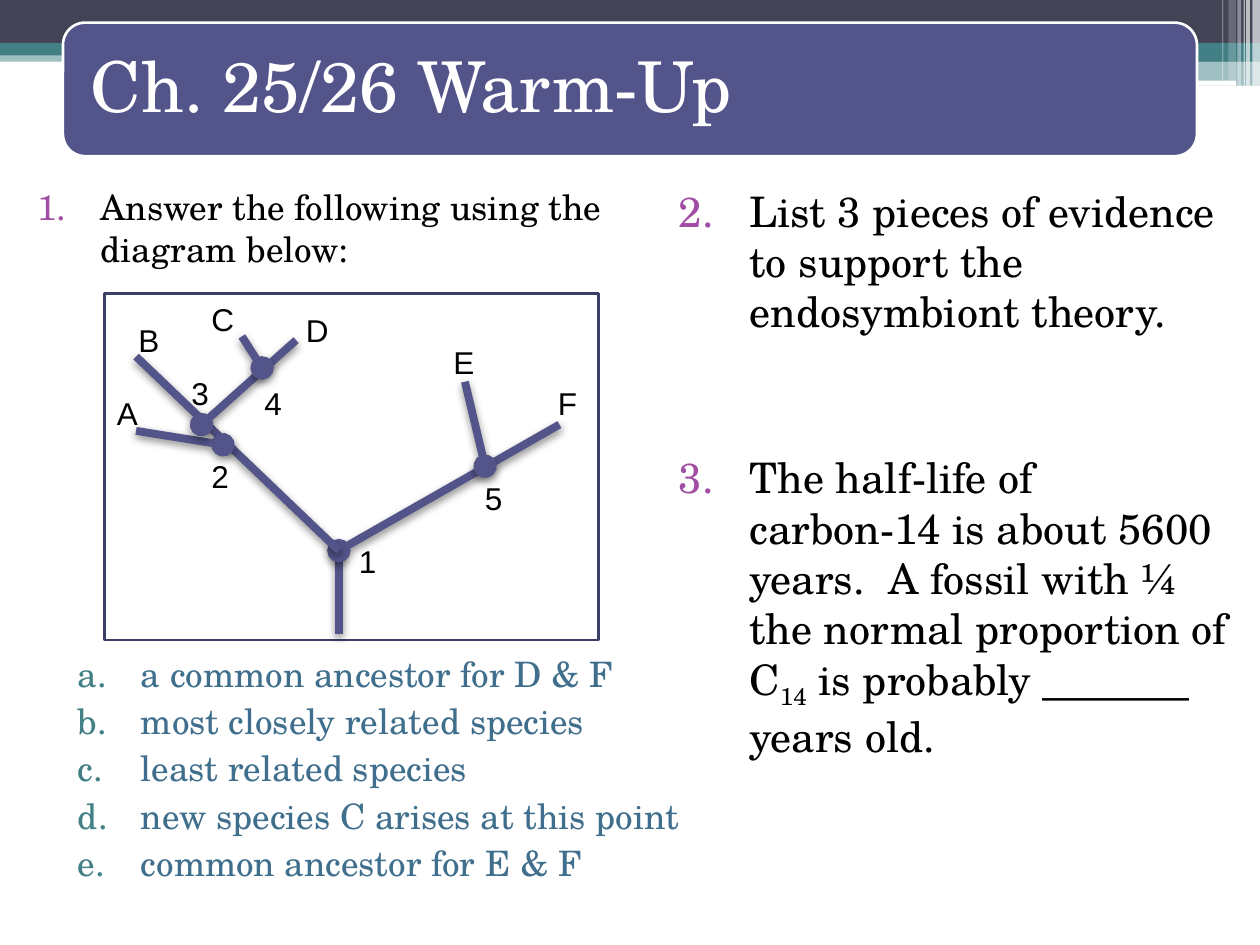
from lxml.etree import SubElement
from pptx import Presentation
from pptx.dml.color import RGBColor
from pptx.enum.shapes import MSO_CONNECTOR as CONN, MSO_SHAPE as SHAPE
from pptx.enum.text import MSO_ANCHOR as ANCHOR, PP_ALIGN as ALIGN
from pptx.oxml.ns import qn
from pptx.util import Inches, Pt

SERIF = "TeX Gyre Schola"
TEAL, INDIGO, WHITE, BLACK = "438086", "53548A", "FFFFFF", "000000"

BANDS = [
    (0, 0.4, 10, 0.09, TEAL, 50),
    (0, 0, 10, 0.34, "424456", 100),
    (0, 0.34, 10, 0.1, TEAL, 100),
    (5.92, 0.39, 4.08, 0.1, TEAL, 100),
    (5.92, 0.48, 4.08, 0.2, TEAL, 50),
]
STRIPES = [
    (9.94, 0.06, 0.68, 65), (9.89, 0.03, 0.68, 65), (9.87, 0.01, 0.68, 60),
    (9.82, 0.03, 0.68, 40), (9.75, 0.06, 0.64, 20), (9.7, 0.01, 0.64, 30),
]
ROOT = (2.69, 4.37)
BRANCHES = [
    ((2.69, 5.03), ROOT, None),
    (ROOT, (4.44, 3.37), "headEnd"),
    (ROOT, (1.08, 2.83), None),
    ((3.85, 3.7), (3.69, 3.03), "headEnd"),
    ((1.08, 3.42), (1.77, 3.53), "tailEnd"),
    ((1.6, 3.37), (2.35, 2.7), "headEnd"),
    ((2.08, 2.92), (1.92, 2.67), "headEnd"),
]
LABELS = [
    ("B", 1, 2.5), ("C", 1.58, 2.33), ("D", 2.33, 2.42), ("E", 3.5, 2.67),
    ("F", 4.33, 3), ("3", 1.42, 2.92), ("4", 2, 3), ("2", 1.58, 3.58),
    ("1", 2.75, 4.25), ("5", 3.75, 3.75), ("A", 0.83, 3.08),
]
TASKS = [
    "a common ancestor for D & F",
    "most closely related species",
    "least related species",
    "new species C arises at this point",
    "common ancestor for E & F",
]


def rgb(color):
    return RGBColor.from_string(color)


def add_block(s, x, y, w, h, color, alpha=100, kind=SHAPE.RECTANGLE, line=None):
    sp = s.shapes.add_shape(kind, Inches(x), Inches(y), Inches(w), Inches(h))
    sp.shadow.inherit = False
    sp.fill.solid()
    sp.fill.fore_color.rgb = rgb(color)
    if alpha < 100:
        clr = sp.fill._xPr.find(".//" + qn("a:srgbClr"))
        SubElement(clr, qn("a:alpha"), val=str(alpha * 1000))
    if line:
        sp.line.color.rgb = rgb(line)
        sp.line.width = Pt(1.5)
    else:
        sp.line.fill.background()
    return sp


def add_branch(s, start, end, oval):
    c = s.shapes.add_connector(CONN.STRAIGHT, *map(Inches, start + end))
    c.line.color.rgb = rgb(INDIGO)
    c.line.width = Pt(4.5)
    if oval:
        SubElement(c.line._get_or_add_ln(), qn("a:" + oval), type="oval")
    effects = SubElement(c._element.spPr, qn("a:effectLst"))
    shadow = SubElement(effects, qn("a:outerShdw"), blurRad=str(Pt(5)),
                        dist=str(Pt(2.1)), dir="5400000", rotWithShape="0")
    clr = SubElement(shadow, qn("a:srgbClr"), val=BLACK)
    SubElement(clr, qn("a:alpha"), val="45000")


def add_box(s, x, y, w, h):
    tf = s.shapes.add_textbox(Inches(x), Inches(y), Inches(w), Inches(h)).text_frame
    tf.word_wrap = True
    return tf


def add_run(p, text, size=18, color=BLACK, font=SERIF, baseline=0):
    r = p.add_run()
    r.text = text
    r.font.size = Pt(size)
    r.font.name = font
    r.font.color.rgb = rgb(color)
    if baseline:
        r.font._element.set("baseline", str(baseline * 1000))


def add_item(tf, text, margin, indent, bullet, style="arabicPeriod", start=1,
             before=3, level=0, **fmt):
    p = tf.paragraphs[0] if not tf.text else tf.add_paragraph()
    p.level = level
    p.space_before = Pt(before)
    pPr = p._p.get_or_add_pPr()
    pPr.set("marL", str(Inches(margin)))
    pPr.set("indent", str(Inches(-indent)))
    SubElement(SubElement(pPr, qn("a:buClr")), qn("a:srgbClr"), val=bullet)
    SubElement(pPr, qn("a:buFont"), typeface=SERIF)
    SubElement(pPr, qn("a:buAutoNum"), type=style, startAt=str(start))
    add_run(p, text, **fmt)
    return p


def add_theme(s):
    for band in BANDS:
        add_block(s, *band)
    add_block(s, 8.06, 0.64, 1.75, 0.04, WHITE, kind=SHAPE.ROUNDED_RECTANGLE)
    for x, w, h, alpha in STRIPES:
        add_block(s, x, 0, w, h, WHITE, alpha)


def add_title(s, text):
    sp = add_block(s, 0.5, 0.18, 9, 1.06, INDIGO,
                   kind=SHAPE.ROUNDED_RECTANGLE, line=WHITE)
    tf = sp.text_frame
    tf.margin_left = tf.margin_right = tf.margin_top = tf.margin_bottom = Inches(0.17)
    tf.vertical_anchor = ANCHOR.MIDDLE
    p = tf.paragraphs[0]
    p.alignment = ALIGN.LEFT
    p.line_spacing = 0.9
    add_run(p, text, size=40, color=WHITE)


def add_questions(s):
    right = add_box(s, 5.17, 1.42, 4.67, 5.17)
    large = dict(margin=0.68, indent=0.56, bullet="A04DA3", start=2, size=24)
    add_item(right, "List 3 pieces of evidence to support the endosymbiont theory.", **large)
    p = add_item(right, "The half-life of carbon-14 is about 5600 years.  A fossil "
                 "with ¼ the normal proportion of C", before=66, **large)
    add_run(p, "14", size=24, baseline=-25)
    add_run(p, " is probably _______ years old.", size=24)

    left = add_box(s, 0.08, 1.42, 5.42, 6.08)
    add_item(left, "Answer the following using the diagram below:",
             0.62, 0.5, "A04DA3", size=20)
    for i, task in enumerate(TASKS):
        add_item(left, task, 0.94, 0.5, TEAL, style="alphaLcPeriod", level=1,
                 before=3 if i else 219, size=20, color="406F8D")


def add_tree(s):
    add_block(s, 0.83, 2.33, 3.92, 2.75, WHITE, line="3D3E66")
    for branch in BRANCHES:
        add_branch(s, *branch)
    for text, x, y in LABELS:
        add_run(add_box(s, x, y, 0.5, 0.42).paragraphs[0], text, font="Arial")


def main():
    prs = Presentation()
    prs.slide_width, prs.slide_height = Inches(10), Inches(7.5)
    s = prs.slides.add_slide(prs.slide_layouts[6])
    add_theme(s)
    add_title(s, "Ch. 25/26 Warm-Up")
    add_questions(s)
    add_tree(s)
    prs.save("out.pptx")


if __name__ == "__main__":
    main()
